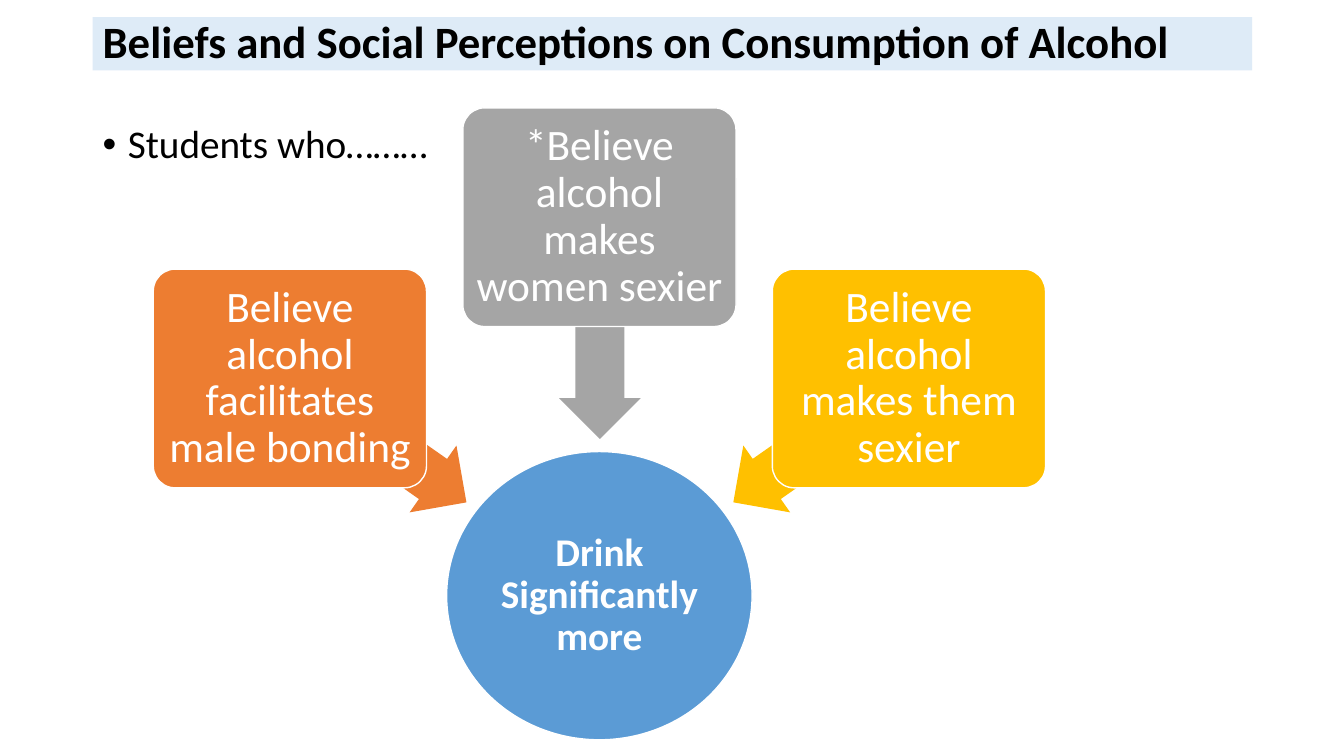
import pptx
import pptx.util
import pptx.dml.color
import pptx.enum.shapes
import pptx.enum.text
import lxml.etree

Inches = pptx.util.Inches
Pt = pptx.util.Pt
RGBColor = pptx.dml.color.RGBColor
Shape = pptx.enum.shapes.MSO_SHAPE
Align = pptx.enum.text.PP_ALIGN
Anchor = pptx.enum.text.MSO_ANCHOR

BLACK = RGBColor(0x00, 0x00, 0x00)
WHITE = RGBColor(0xFF, 0xFF, 0xFF)
PALE_BLUE = RGBColor(0xDE, 0xEB, 0xF7)
BLUE = RGBColor(0x5B, 0x9B, 0xD5)
ORANGE = RGBColor(0xED, 0x7D, 0x31)
GRAY = RGBColor(0xA5, 0xA5, 0xA5)
GOLD = RGBColor(0xFF, 0xC0, 0x00)


class BeliefSlide:
    font = "Calibri"
    line_spacing = 0.9

    def __init__(self, slide):
        self.slide = slide

    def shape(self, kind, left, top, width, height, fill, outlined=False):
        shape = self.slide.shapes.add_shape(
            kind, Inches(left), Inches(top), Inches(width), Inches(height))
        shape.shadow.inherit = False
        shape.fill.solid()
        shape.fill.fore_color.rgb = fill
        if outlined:
            shape.line.color.rgb = WHITE
            shape.line.width = Pt(1)
        else:
            shape.line.fill.background()
        return shape

    def label(self, shape, text, size, color, bold=False, align=Align.CENTER,
              anchor=Anchor.MIDDLE, inset=None):
        frame = shape.text_frame
        frame.word_wrap = True
        frame.vertical_anchor = anchor
        if inset is not None:
            frame.margin_left = frame.margin_right = Inches(inset)
            frame.margin_top = frame.margin_bottom = Inches(inset)
        frame.text = text
        paragraph = frame.paragraphs[0]
        paragraph.alignment = align
        paragraph.line_spacing = self.line_spacing
        font = paragraph.runs[0].font
        font.name = self.font
        font.size = Pt(size)
        font.bold = bold
        font.color.rgb = color
        return paragraph

    def title(self, text):
        band = self.shape(Shape.RECTANGLE, 0.92, 0.17, 11.5, 0.53, PALE_BLUE)
        self.label(band, text, 32, BLACK, bold=True, align=Align.LEFT)

    def bullet(self, text):
        body = self.slide.shapes.add_textbox(
            Inches(0.92), Inches(1.19), Inches(11.5), Inches(5.56))
        paragraph = self.label(body, text, 28, BLACK, align=Align.LEFT, anchor=Anchor.TOP)
        paragraph.space_before = Pt(10)
        properties = paragraph._p.get_or_add_pPr()
        properties.set("marL", str(Inches(0.25)))
        properties.set("indent", str(-Inches(0.25)))
        namespace = "{http://schemas.openxmlformats.org/drawingml/2006/main}"
        lxml.etree.SubElement(properties, namespace + "buFont", typeface="Arial")
        lxml.etree.SubElement(properties, namespace + "buChar", char="•")

    def outcome(self, text):
        circle = self.shape(Shape.OVAL, 4.43, 4.48, 3.03, 2.86, BLUE, outlined=True)
        self.label(circle, text, 28, WHITE, bold=True, inset=0.02)

    def arrow(self, center_x, center_y, length, rotation, color):
        thickness = 0.81
        arrow = self.shape(Shape.LEFT_ARROW, center_x - length / 2,
                           center_y - thickness / 2, length, thickness, color)
        arrow.adjustments[0] = 0.6
        arrow.adjustments[1] = 0.5
        arrow.rotation = rotation

    def belief(self, text, left, top, color):
        card = self.shape(Shape.ROUNDED_RECTANGLE, left, top, 2.71, 2.17, color, outlined=True)
        card.adjustments[0] = 0.1
        self.label(card, text, 31, WHITE, inset=0.06)


def main():
    deck = pptx.Presentation()
    deck.slide_width = Inches(13.33)
    deck.slide_height = Inches(7.5)
    page = BeliefSlide(deck.slides.add_slide(deck.slide_layouts[6]))

    page.title("Beliefs and Social Perceptions on Consumption of Alcohol")
    page.bullet("Students who………")
    page.outcome("Drink Significantly more")

    beliefs = [
        ("Believe alcohol facilitates male bonding", ORANGE, 2.67, 4.37, 2.14, 215),
        ("*Believe alcohol makes women sexier ", GRAY, 1.07, 3.26, 2.19, 270),
        ("Believe alcohol makes them sexier", GOLD, 2.67, 4.37, 2.14, 325),
    ]
    for index, (text, color, top, arrow_y, length, rotation) in enumerate(beliefs):
        page.arrow(3.75 + 2.2 * index, arrow_y, length, rotation, color)
        page.belief(text, 1.52 + 3.07 * index, top, color)

    deck.save("out.pptx")


if __name__ == "__main__":
    main()
